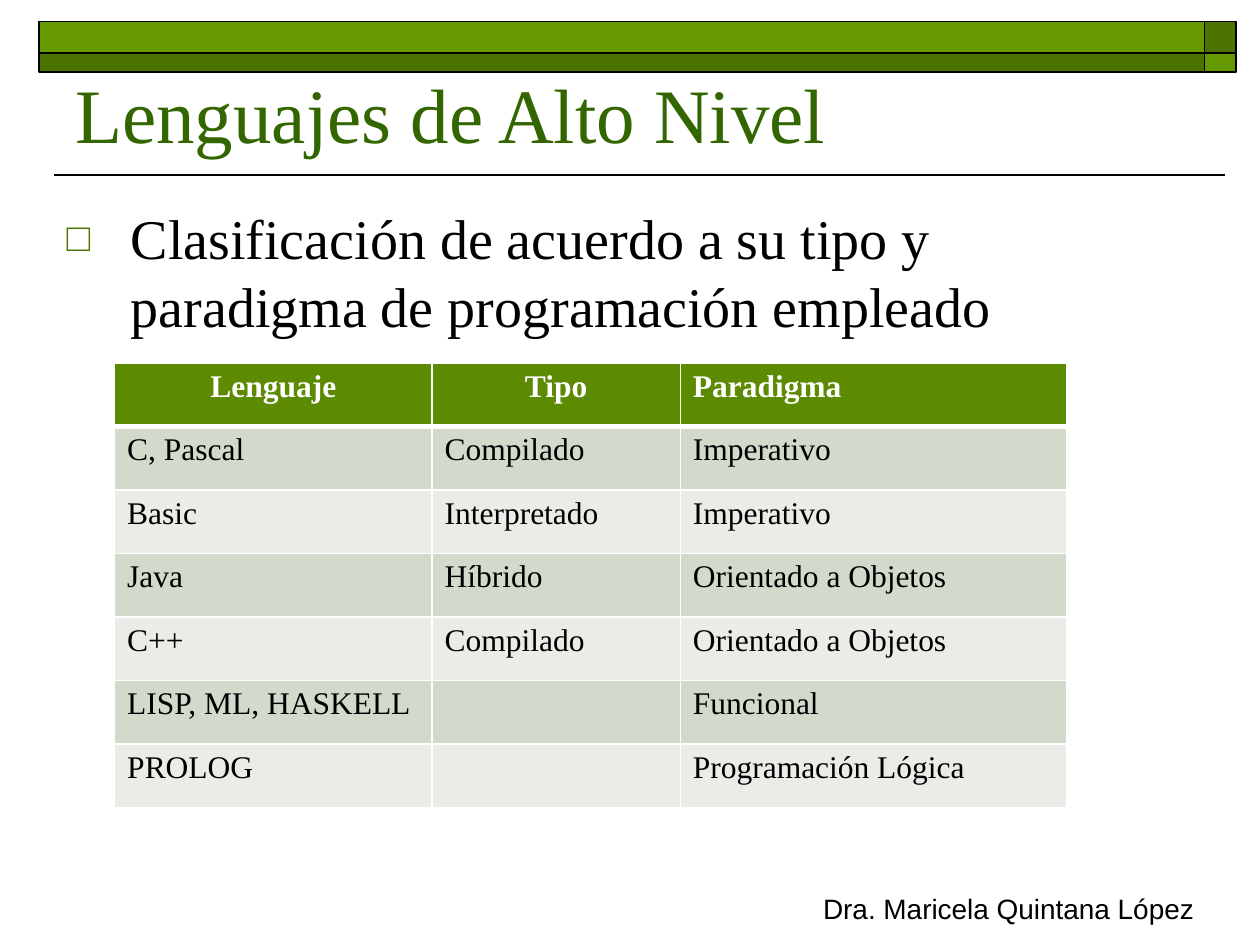
from lxml import etree
from pptx import Presentation
from pptx.dml.color import RGBColor
from pptx.enum.shapes import MSO_CONNECTOR, MSO_SHAPE
from pptx.enum.text import MSO_ANCHOR, PP_ALIGN
from pptx.oxml.ns import qn
from pptx.util import Inches, Pt

RECT, LINE = MSO_SHAPE.RECTANGLE, MSO_CONNECTOR.STRAIGHT
TOP, LOW = MSO_ANCHOR.TOP, MSO_ANCHOR.BOTTOM
LEFT, MID = PP_ALIGN.LEFT, PP_ALIGN.CENTER
COLS, ROWS = 100, 75
SERIF, SANS = "Times New Roman", "Arial"
HUES = {
    "lime": "669900", "moss": "4C7200", "title": "336600", "head": "5C8A00",
    "odd": "D2DACC", "even": "EAEDE7", "ink": "000000", "white": "FFFFFF",
}
DATA = [
    ("Lenguaje", "Tipo", "Paradigma"),
    ("C, Pascal", "Compilado", "Imperativo"),
    ("Basic", "Interpretado", "Imperativo"),
    ("Java", "Híbrido", "Orientado a Objetos"),
    ("C++", "Compilado", "Orientado a Objetos"),
    ("LISP, ML, HASKELL", "", "Funcional"),
    ("PROLOG", "", "Programación Lógica"),
]


def hue(name):
    """Return the named colour."""
    return RGBColor.from_string(HUES[name])


def grid(*cells):
    """Turn grid cells, 100 columns by 75 rows, into lengths."""
    return [Inches(10 * c / COLS) for c in cells]


def add(node, tag, **attrs):
    """Append a drawing element and return it."""
    return etree.SubElement(node, qn(tag), **attrs)


def write(frame, text, size=18, font=SERIF, tint="ink", bold=False, align=LEFT):
    """Write formatted text and return its paragraph."""
    para = frame.paragraphs[0]
    para.alignment = align
    run = para.add_run()
    run.text = text
    run.font.size, run.font.name, run.font.bold = Pt(size), font, bold
    run.font.color.rgb = hue(tint)
    return para


def label(slide, area, text, anchor=TOP, **style):
    """Add a wrapped text box and return its paragraph."""
    frame = slide.shapes.add_textbox(*grid(*area)).text_frame
    frame.word_wrap, frame.vertical_anchor = True, anchor
    return write(frame, text, **style)


def bullet(para, mark, indent):
    """Give a paragraph a hanging square bullet."""
    para.space_before = Pt(6.4)
    props = para._p.get_or_add_pPr()
    shift = Inches(indent)
    props.set("marL", str(shift))
    props.set("indent", str(-shift))
    add(add(props, "a:buClr"), "a:srgbClr", val=HUES["moss"])
    add(props, "a:buSzPct", val="70000")
    add(props, "a:buFont", typeface=SANS)
    add(props, "a:buChar", char=mark)


def banner(slide):
    """Draw the checkered band of two rows and two columns."""
    for r, (top, high) in enumerate([(1.7, 2.5), (4.2, 1.5)]):
        for c, (left, wide) in enumerate([(3.1, 92.5), (95.6, 2.5)]):
            bar = slide.shapes.add_shape(RECT, *grid(left, top, wide, high))
            bar.shadow.inherit = False
            bar.fill.solid()
            bar.fill.fore_color.rgb = hue("moss" if (r + c) % 2 else "lime")
            bar.line.color.rgb, bar.line.width = hue("ink"), Pt(1)


def rule(slide, left, right, row):
    """Draw a level line."""
    line = slide.shapes.add_connector(LINE, *grid(left, row, right, row))
    line.line.color.rgb, line.line.width = hue("ink"), Pt(1)
    add(line._element.spPr, "a:effectLst")


def edge(cell, under):
    """Draw the white borders of a cell before its fill is set."""
    props = cell._tc.get_or_add_tcPr()
    for tag, wide in (("a:lnL", 1), ("a:lnR", 1), ("a:lnT", 1), ("a:lnB", under)):
        side = add(props, tag, w=str(Pt(wide)))
        add(add(side, "a:solidFill"), "a:srgbClr", val=HUES["white"])


def table(slide, left, top, widths, high):
    """Add the table of languages."""
    area = grid(left, top, sum(widths), high * len(DATA))
    body = slide.shapes.add_table(len(DATA), len(widths), *area).table
    for col, wide in zip(body.columns, grid(*widths)):
        col.width = wide
    for r, row in enumerate(DATA):
        for c, text in enumerate(row):
            cell, head = body.cell(r, c), r == 0
            edge(cell, 3 if head else 1)
            cell.fill.solid()
            cell.fill.fore_color.rgb = hue("head" if head else "odd" if r % 2 else "even")
            if text:
                write(cell.text_frame, text, tint="white" if head else "ink",
                      bold=head, align=MID if head and c < 2 else LEFT)


def main():
    """Build and save the slide."""
    deck = Presentation()
    deck.slide_width, deck.slide_height = grid(COLS, ROWS)
    slide = deck.slides.add_slide(deck.slide_layouts[6])
    banner(slide)
    label(slide, (64.2, 70.3, 31.7, 5), "Dra. Maricela Quintana López",
          size=16, font=SANS, align=MID)
    label(slide, (5, 5.8, 90, 7.3), "Lenguajes de Alto Nivel",
          anchor=LOW, size=44, tint="title")
    para = label(slide, (4.3, 15.7, 90, 47),
                 "Clasificación de acuerdo a su tipo y paradigma de programación empleado",
                 size=32)
    bullet(para, "□", 0.51)
    table(slide, 9.1, 28.8, (25.2, 19.7, 30.7), 5.04)
    rule(slide, 4.3, 97.2, 13.9)
    deck.save("out.pptx")


if __name__ == "__main__":
    main()
